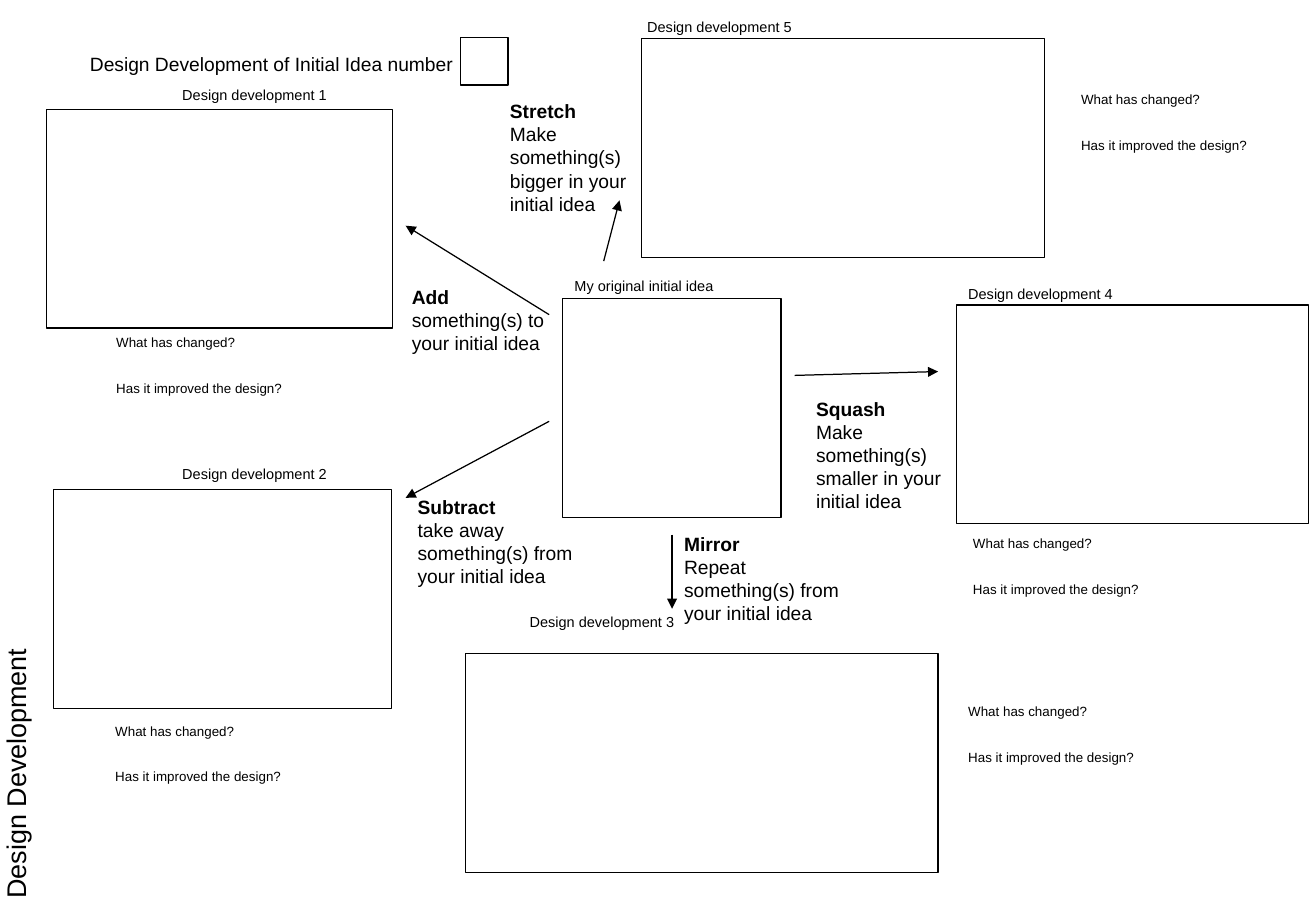
from dataclasses import dataclass
from typing import Any

from lxml import etree
from pptx import Presentation
from pptx import util as u
from pptx.dml import color
from pptx.enum import shapes, text
from pptx.oxml import ns

Pair = tuple[float, float]
Area = tuple[float, float, float, float]


@dataclass(frozen=True)
class Theme:
    font: str = "Arial"
    ink: color.RGBColor = color.RGBColor(0, 0, 0)
    line: float = 0.75
    heading: float = 16
    body: float = 11.4
    caption: float = 8.6
    question: float = 7.9
    question_gap: float = 17.6


@dataclass(frozen=True)
class Run:
    words: str
    bold: bool = False


@dataclass(frozen=True)
class Development:
    frame: Area
    caption: Pair
    questions: Pair
    arrow_start: Pair
    arrow_end: Pair
    action: Area
    paragraphs: list[list[Run]]


THEME = Theme()
FRAME_HEIGHT = 4.57
CAPTION_SIZE = (3.58, 0.64)
QUESTION_SIZE = (5.59, 1.93)
QUESTIONS = [[Run("What has changed?")], [Run("Has it improved the design?")]]

DEVELOPMENTS = [
    Development(
        (0.97, 2.29, 7.24, FRAME_HEIGHT), (3.56, 1.68), (2.18, 6.86),
        (11.48, 6.58), (8.48, 4.72), (8.36, 5.84, 3.3, 1.73),
        [[Run("Add ", True), Run("something(s) to your initial idea")]],
    ),
    Development(
        (1.12, 10.24, 7.06, FRAME_HEIGHT), (3.56, 9.6), (2.16, 14.99),
        (11.48, 8.81), (8.48, 10.41), (8.48, 10.24, 4.14, 2.21),
        [[Run("Subtract", True)], [Run("take away something(s) from your initial idea")]],
    ),
    Development(
        (9.73, 13.67, 9.88, FRAME_HEIGHT), (10.82, 12.7), (19.99, 14.58),
        (14.05, 11.18), (14.05, 12.73), (14.05, 11, 4.14, 2.21),
        [[Run("Mirror", True)], [Run("Repeat something(s) from your initial idea")]],
    ),
    Development(
        (19.99, 6.38, 7.37, FRAME_HEIGHT), (19.99, 5.84), (20.09, 11.07),
        (16.61, 7.85), (19.61, 7.77), (16.81, 8.18, 3.53, 2.69),
        [[Run("Squash", True)], [Run("Make something(s) smaller in your initial idea")]],
    ),
    Development(
        (13.41, 0.81, 8.43, FRAME_HEIGHT), (13.28, 0.25), (22.35, 1.78),
        (12.62, 5.46), (12.95, 4.19), (10.41, 1.96, 3.53, 2.69),
        [[Run("Stretch", True)], [Run("Make something(s) bigger in your initial idea")]],
    ),
]


def lengths(values: tuple[float, ...]) -> list[u.Length]:
    return [u.Cm(value) for value in values]


def apply_format(target: Any, values: dict[str, Any]) -> None:
    for name, value in values.items():
        setattr(target, name, value)


def add_frame(slide: Any, area: Area) -> None:
    shape = slide.shapes.add_shape(shapes.MSO_SHAPE.RECTANGLE, *lengths(area))
    shape.shadow.inherit = False
    shape.fill.background()
    shape.line.color.rgb = THEME.ink
    shape.line.width = u.Pt(THEME.line)


def add_text(
    slide: Any, area: Area, paragraphs: list[list[Run]], size: float,
    gap: float = 0, rotation: float = 0,
) -> None:
    shape = slide.shapes.add_textbox(*lengths(area))
    shape.rotation = rotation
    frame_format = {
        "word_wrap": True,
        "auto_size": text.MSO_AUTO_SIZE.NONE,
        "vertical_anchor": text.MSO_ANCHOR.TOP,
    }
    apply_format(shape.text_frame, frame_format)
    for index, runs in enumerate(paragraphs):
        frame = shape.text_frame
        paragraph = frame.add_paragraph() if index else frame.paragraphs[0]
        paragraph.space_before = u.Pt(gap if index else 0)
        for part in runs:
            run = paragraph.add_run()
            run.text = part.words
            run_format = {"name": THEME.font, "size": u.Pt(size), "bold": part.bold}
            apply_format(run.font, run_format)
            run.font.color.rgb = THEME.ink


def add_arrow(slide: Any, start: Pair, end: Pair) -> None:
    connector = slide.shapes.add_connector(
        shapes.MSO_CONNECTOR.STRAIGHT, *lengths(start + end)
    )
    connector.line.color.rgb = THEME.ink
    connector.line.width = u.Pt(THEME.line)
    properties = connector._element.spPr
    line = properties.find(ns.qn("a:ln"))
    etree.SubElement(line, ns.qn("a:tailEnd"), type="triangle")
    etree.SubElement(properties, ns.qn("a:effectLst"))


def add_caption(slide: Any, position: Pair, words: str) -> None:
    add_text(slide, position + CAPTION_SIZE, [[Run(words)]], THEME.caption)


def add_development(slide: Any, number: int, development: Development) -> None:
    add_frame(slide, development.frame)
    add_caption(slide, development.caption, f"Design development {number}")
    add_arrow(slide, development.arrow_start, development.arrow_end)
    add_text(slide, development.action, development.paragraphs, THEME.body)
    add_text(
        slide, development.questions + QUESTION_SIZE, QUESTIONS,
        THEME.question, gap=THEME.question_gap,
    )


def main() -> None:
    presentation = Presentation()
    presentation.slide_width, presentation.slide_height = lengths((27.51, 19.05))
    slide = presentation.slides.add_slide(presentation.slide_layouts[6])

    title = [[Run("Design Development of Initial Idea number")]]
    add_text(slide, (1.63, 0.97, 17.42, 0.74), title, THEME.body)
    add_frame(slide, (9.63, 0.79, 0.99, 0.99))
    add_frame(slide, (11.76, 6.25, FRAME_HEIGHT, FRAME_HEIGHT))
    add_caption(slide, (11.76, 5.66), "My original initial idea")
    for number, development in enumerate(DEVELOPMENTS, start=1):
        add_development(slide, number, development)
    side_title = [[Run("Design Development")]]
    add_text(slide, (-5.46, 12.78, 11.58, 0.94), side_title, THEME.heading, rotation=270)

    presentation.save("out.pptx")


if __name__ == "__main__":
    main()
